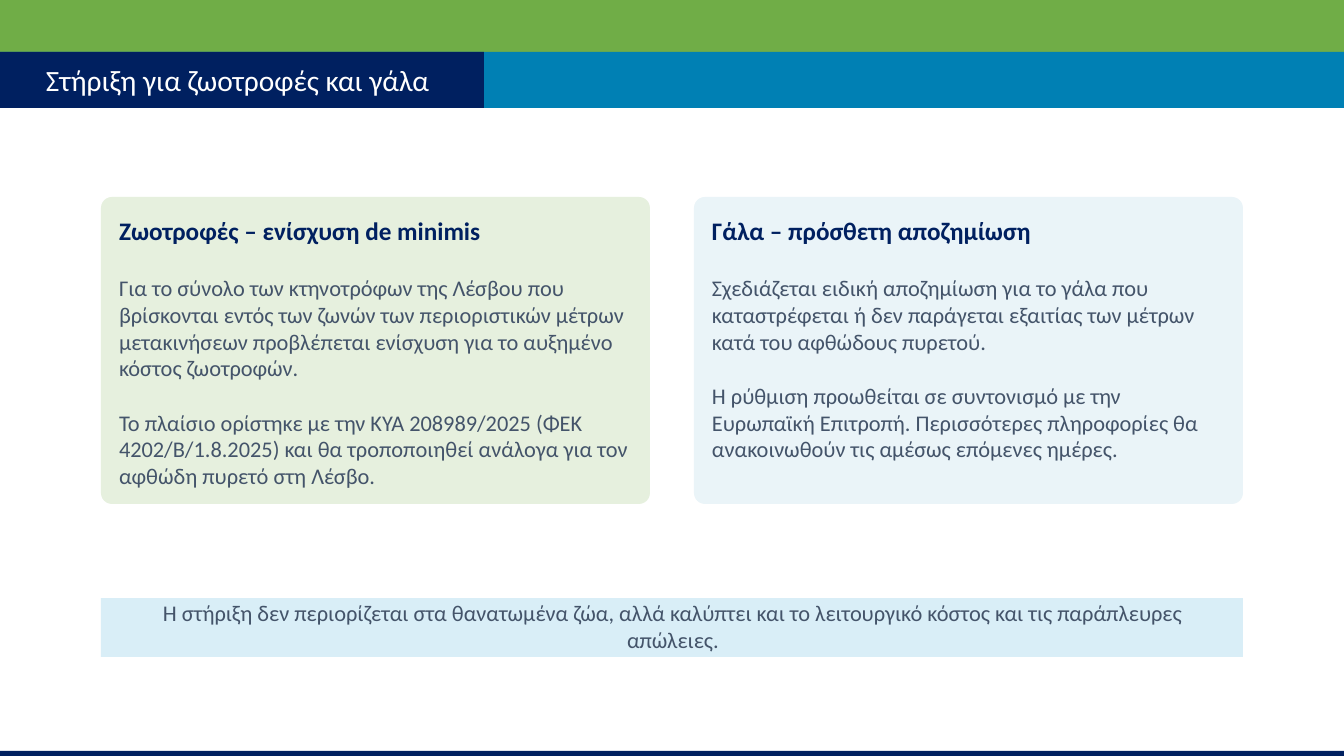
from dataclasses import dataclass

from pptx import Presentation
from pptx.dml.color import RGBColor
from pptx.enum.shapes import MSO_SHAPE
from pptx.enum.text import MSO_ANCHOR, PP_ALIGN
from pptx.util import Emu, Pt

RECTANGLE = MSO_SHAPE.RECTANGLE
ROUNDED = MSO_SHAPE.ROUNDED_RECTANGLE
TOP, MIDDLE = MSO_ANCHOR.TOP, MSO_ANCHOR.MIDDLE
LEFT, CENTER = PP_ALIGN.LEFT, PP_ALIGN.CENTER

EMU_PER_PX = 914400 / 100.8
PAGE_WIDTH, PAGE_HEIGHT = 1344, 756


def px(length):
    return Emu(round(length * EMU_PER_PX))


@dataclass(frozen=True)
class Theme:
    font: str = "Calibri"
    green: str = "70AD47"
    blue: str = "0080B4"
    navy: str = "002060"
    white: str = "FFFFFF"
    slate: str = "44546A"
    pale_green: str = "E6F0DE"
    pale_blue: str = "EAF4F8"
    note_blue: str = "D9EEF7"
    title_size: int = 21
    heading_size: int = 18
    body_size: int = 16
    paragraph_gap: float = 19.5
    card_corner: float = 0.036


def write_text(frame, paragraphs, *, font, size, color, bold=False,
               align=LEFT, anchor=TOP, gap=0):
    frame.word_wrap = True
    frame.vertical_anchor = anchor
    frame.margin_left = frame.margin_right = 0
    frame.margin_top = frame.margin_bottom = 0
    for index, text in enumerate(paragraphs):
        para = frame.add_paragraph() if index else frame.paragraphs[0]
        para.alignment = align
        if index:
            para.space_before = Pt(gap)
        span = para.add_run()
        span.text = text
        span.font.name = font
        span.font.size = Pt(size)
        span.font.bold = bold
        span.font.color.rgb = RGBColor.from_string(color)


class SlideBuilder:
    def __init__(self, page, theme):
        self.page = page
        self.theme = theme

    def panel(self, left, top, width, height, color, kind=RECTANGLE):
        shape = self.page.shapes.add_shape(
            kind, px(left), px(top), px(width), px(height))
        shape.shadow.inherit = False
        shape.fill.solid()
        shape.fill.fore_color.rgb = RGBColor.from_string(color)
        shape.line.fill.background()
        return shape

    def text(self, left, top, width, height, paragraphs, **style):
        box = self.page.shapes.add_textbox(
            px(left), px(top), px(width), px(height))
        write_text(box.text_frame, paragraphs, font=self.theme.font, **style)

    def card(self, left, color, heading, paragraphs):
        theme = self.theme
        shape = self.panel(left, 197, 549, 307, color, ROUNDED)
        shape.adjustments[0] = theme.card_corner
        self.text(left + 18, 211, 513, 38, [heading], size=theme.heading_size,
                  color=theme.navy, bold=True, anchor=MIDDLE)
        self.text(left + 18, 274, 513, 215, paragraphs, size=theme.body_size,
                  color=theme.slate, gap=theme.paragraph_gap)


def main():
    deck = Presentation()
    deck.slide_width, deck.slide_height = px(PAGE_WIDTH), px(PAGE_HEIGHT)
    theme = Theme()
    slide = SlideBuilder(deck.slides.add_slide(deck.slide_layouts[6]), theme)

    # Header bands, title and footer line
    slide.panel(0, 0, PAGE_WIDTH, 52, theme.green)
    slide.panel(0, 52, PAGE_WIDTH, 56, theme.blue)
    slide.panel(0, 52, 484, 56, theme.navy)
    slide.text(46, 63, 1189, 34, ["Στήριξη για ζωοτροφές και γάλα"],
               size=theme.title_size, color=theme.white, anchor=MIDDLE)
    slide.panel(0, 751, PAGE_WIDTH, 5, theme.navy)

    # Two support cards
    cards = [
        (theme.pale_green, "Ζωοτροφές – ενίσχυση de minimis", [
            "Για το σύνολο των κτηνοτρόφων της Λέσβου που βρίσκονται εντός "
            "των ζωνών των περιοριστικών μέτρων μετακινήσεων προβλέπεται "
            "ενίσχυση για το αυξημένο κόστος ζωοτροφών.",
            "Το πλαίσιο ορίστηκε με την ΚΥΑ 208989/2025 (ΦΕΚ "
            "4202/Β/1.8.2025) και θα τροποποιηθεί ανάλογα για τον αφθώδη "
            "πυρετό στη Λέσβο."]),
        (theme.pale_blue, "Γάλα – πρόσθετη αποζημίωση", [
            "Σχεδιάζεται ειδική αποζημίωση για το γάλα που καταστρέφεται ή "
            "δεν παράγεται εξαιτίας των μέτρων κατά του αφθώδους πυρετού.",
            "Η ρύθμιση προωθείται σε συντονισμό με την Ευρωπαϊκή Επιτροπή. "
            "Περισσότερες πληροφορίες θα ανακοινωθούν τις αμέσως επόμενες "
            "ημέρες."]),
    ]
    for index, (color, heading, paragraphs) in enumerate(cards):
        slide.card(101 + index * 593, color, heading, paragraphs)

    # Closing note
    slide.panel(101, 598, 1142, 59, theme.note_blue)
    slide.text(126, 618, 1094, 16, [
        "Η στήριξη δεν περιορίζεται στα θανατωμένα ζώα, αλλά καλύπτει και "
        "το λειτουργικό κόστος και τις παράπλευρες απώλειες."],
        size=theme.body_size, color=theme.slate, align=CENTER, anchor=MIDDLE)

    deck.save("out.pptx")


if __name__ == "__main__":
    main()
